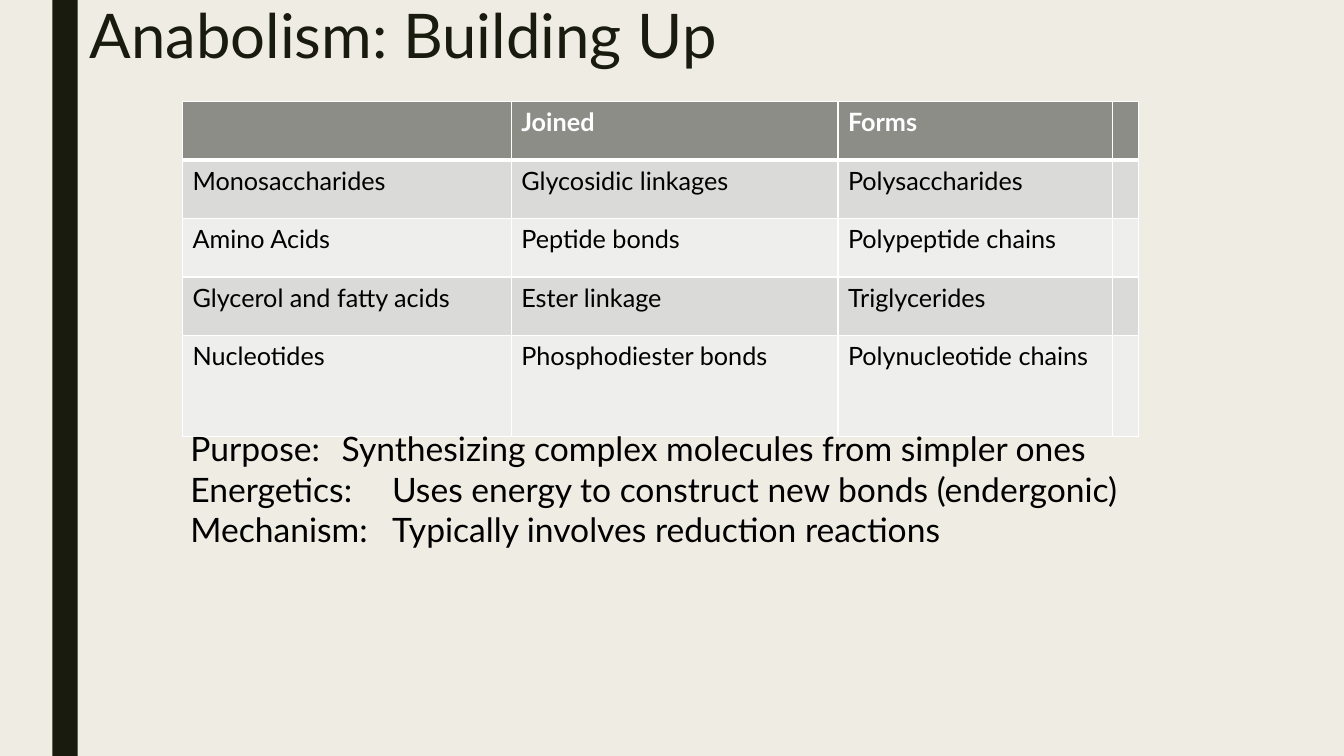
from dataclasses import dataclass

import pptx
import pptx.dml.color
import pptx.enum.shapes
import pptx.enum.text
import pptx.oxml
import pptx.oxml.ns
import pptx.util
from lxml import etree

RGB = pptx.dml.color.RGBColor
CREAM = RGB(0xEF, 0xED, 0xE3)
INK = RGB(0x19, 0x1B, 0x0E)
BLACK = RGB(0, 0, 0)
WHITE = RGB(0xFF, 0xFF, 0xFF)
HEAD = RGB(0x8C, 0x8D, 0x86)
BANDS = (RGB(0xDA, 0xDB, 0xD9), RGB(0xEE, 0xEE, 0xED))
FONT = "Lato"
WIDE, HIGH = 13.33, 7.5


@dataclass(frozen=True)
class Box:
    """Place in percent of the slide's width and height."""
    left: float
    top: float
    width: float
    height: float

    def place(self) -> tuple:
        return across(self.left), down(self.top), across(self.width), down(self.height)


@dataclass(frozen=True)
class Style:
    size: float
    color: RGB
    bold: bool = False


@dataclass(frozen=True)
class Note:
    label: str
    text: str


TITLE = Style(44, INK)
BODY = Style(24, BLACK)
TOP = Style(18, WHITE, True)
CELL = Style(18, BLACK)

COLS = (24.46, 24.31, 20.41, 1.95)
ROWS = (7.73, 7.73, 7.73, 7.73, 13.33)
DATA = (
    ("", "Joined", "Forms", ""),
    ("Monosaccharides", "Glycosidic linkages", "Polysaccharides", ""),
    ("Amino Acids", "Peptide bonds", "Polypeptide chains", ""),
    ("Glycerol and fatty acids", "Ester linkage", "Triglycerides", ""),
    ("Nucleotides", "Phosphodiester bonds", "Polynucleotide chains", ""),
)
NOTES = (
    Note("Purpose", "Synthesizing complex molecules from simpler ones"),
    Note("Energetics", "Uses energy to construct new bonds (endergonic)"),
    Note("Mechanism", "Typically involves reduction reactions"),
)
STOPS = (1.5, 2)


def across(share: float) -> int:
    return pptx.util.Inches(WIDE * share / 100)


def down(share: float) -> int:
    return pptx.util.Inches(HIGH * share / 100)


def write(para, text: str, style: Style) -> None:
    run = para.add_run()
    run.text = text
    font = run.font
    font.name, font.size, font.bold = FONT, pptx.util.Pt(style.size), style.bold
    font.color.rgb = style.color


def frame(slide, box: Box):
    text = slide.shapes.add_textbox(*box.place()).text_frame
    text.word_wrap = True
    return text


def edge(cell, side: str, points: float) -> None:
    line = etree.SubElement(cell._tc.get_or_add_tcPr(), pptx.oxml.ns.qn(f"a:ln{side}"))
    line.set("w", str(pptx.util.Pt(points)))
    fill = etree.SubElement(line, pptx.oxml.ns.qn("a:solidFill"))
    etree.SubElement(fill, pptx.oxml.ns.qn("a:srgbClr")).set("val", str(WHITE))


def tabs(para) -> None:
    stops = etree.SubElement(para._p.get_or_add_pPr(), pptx.oxml.ns.qn("a:tabLst"))
    for stop in STOPS:
        tab = etree.SubElement(stops, pptx.oxml.ns.qn("a:tab"))
        tab.set("pos", str(pptx.util.Inches(stop)))
        tab.set("algn", "l")


def grid(slide, box: Box) -> None:
    table = slide.shapes.add_table(len(ROWS), len(COLS), *box.place()).table
    for col, share in zip(table.columns, COLS):
        col.width = across(share)
    for row, share in zip(table.rows, ROWS):
        row.height = down(share)
    for r, words in enumerate(DATA):
        for c, word in enumerate(words):
            cell = table.cell(r, c)
            # Borders go before the fill; the rule under the header is thick
            for side in "LRTB":
                thick = (r, side) in ((0, "B"), (1, "T"))
                edge(cell, side, 3 if thick else 1)
            cell.fill.solid()
            cell.fill.fore_color.rgb = BANDS[(r - 1) % 2] if r else HEAD
            if word:
                write(cell.text_frame.paragraphs[0], word, CELL if r else TOP)


def main() -> None:
    deck = pptx.Presentation()
    deck.slide_width = pptx.util.Inches(WIDE)
    deck.slide_height = pptx.util.Inches(HIGH)
    slide = deck.slides.add_slide(deck.slide_layouts[6])

    # Background and side bar
    slide.background.fill.solid()
    slide.background.fill.fore_color.rgb = CREAM
    rect = pptx.enum.shapes.MSO_SHAPE.RECTANGLE
    bar = slide.shapes.add_shape(rect, *Box(3.9, 0, 1.88, 100).place())
    bar.shadow.inherit = False
    bar.fill.solid()
    bar.fill.fore_color.rgb = INK
    bar.line.fill.background()

    # Title
    para = frame(slide, Box(5.93, 0.13, 78.77, 21.6)).paragraphs[0]
    para.line_spacing = 0.89
    write(para, "Anabolism: Building Up", TITLE)

    # Table of bonds
    grid(slide, Box(13.58, 13.47, sum(COLS), sum(ROWS)))

    # Notes below the table
    text = frame(slide, Box(13.43, 56, 71.27, 17.47))
    text.auto_size = pptx.enum.text.MSO_AUTO_SIZE.SHAPE_TO_FIT_TEXT
    for i, note in enumerate(NOTES):
        para = text.add_paragraph() if i else text.paragraphs[0]
        tabs(para)
        write(para, f"{note.label}: \t{note.text}", BODY)

    deck.save("out.pptx")


if __name__ == "__main__":
    main()
